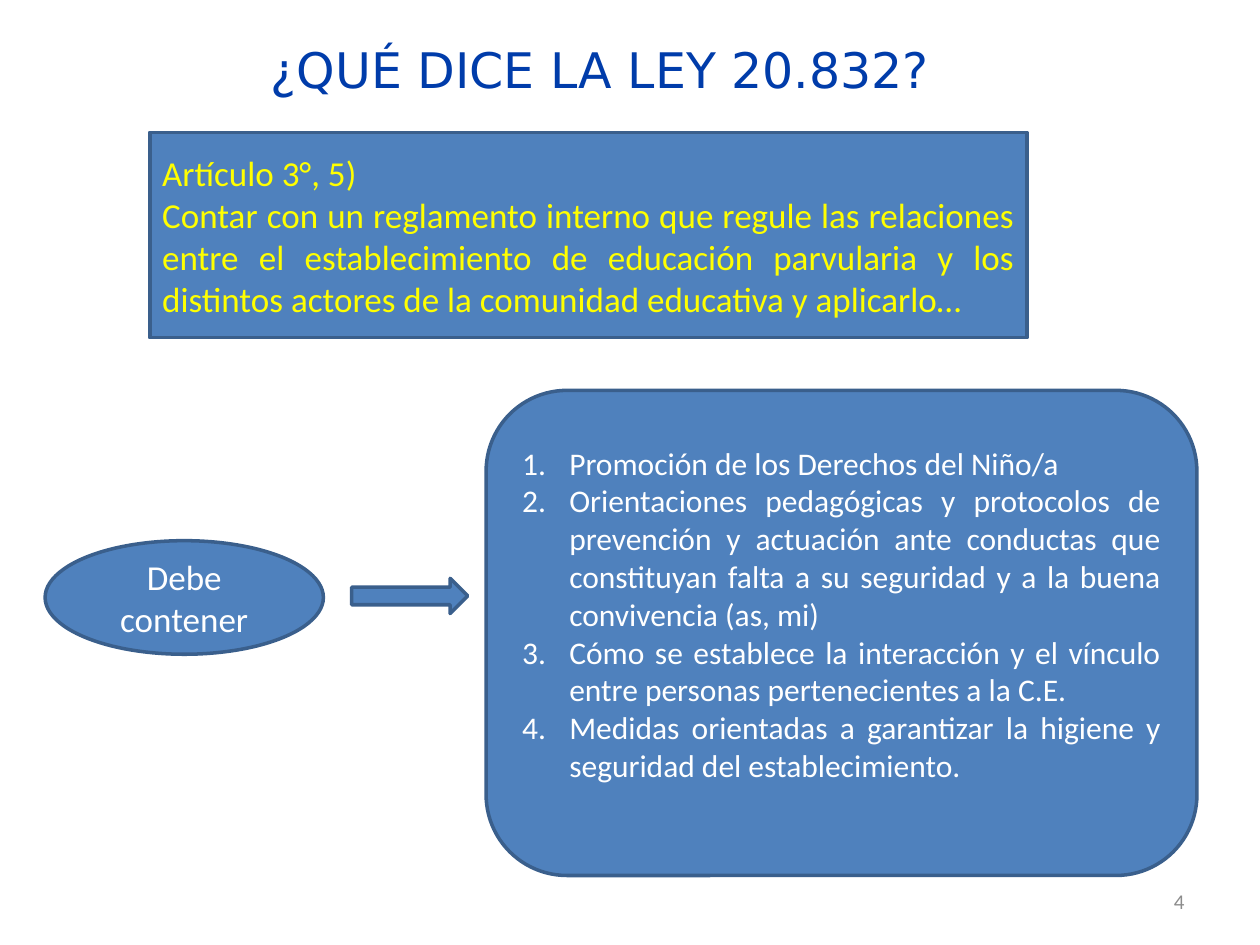
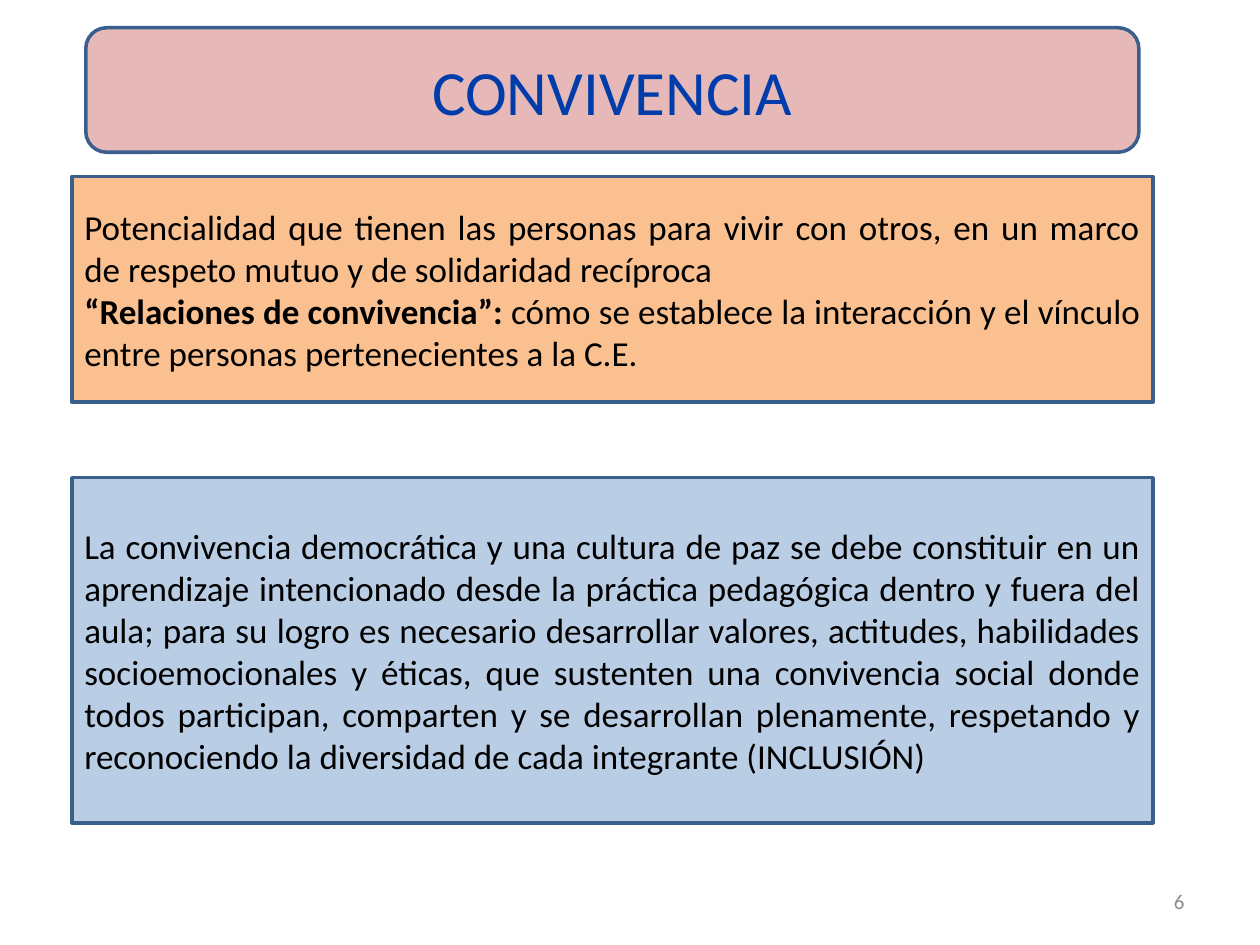
from lxml import etree
from pptx import Presentation
from pptx.dml.color import RGBColor
from pptx.enum.shapes import MSO_SHAPE
from pptx.enum.text import MSO_ANCHOR, PP_ALIGN
from pptx.oxml.ns import qn
from pptx.util import Cm, Pt

COLORS = {
    "blue": "4F81BD",
    "border": "3A5F8C",
    "title": "003CAA",
    "yellow": "FFFF00",
    "white": "FFFFFF",
    "black": "000000",
    "gray": "8C8C8C",
    "orange": "FAC090",
    "light_blue": "B9CDE5",
    "pink": "E6B9B8",
}
BODY_FONT = "Calibri"
TITLE_FONT = "DejaVu Sans"
LIST_INDENT = Cm(0.95)

ARTICLE = [
    "Artículo 3°, 5)",
    "Contar con un reglamento interno que regule las relaciones entre el "
    "establecimiento de educación parvularia y los distintos actores de la "
    "comunidad educativa y aplicarlo…",
]
REQUIREMENTS = [
    "Promoción de los Derechos del Niño/a",
    "Orientaciones pedagógicas y protocolos de prevención y actuación ante "
    "conductas que constituyan falta a su seguridad y a la buena convivencia (as, mi)",
    "Cómo se establece la interacción y el vínculo entre personas "
    "pertenecientes a la C.E.",
    "Medidas orientadas a garantizar la higiene y seguridad del establecimiento.",
]
DEFINITION = [
    "Potencialidad que tienen las personas para vivir con otros, en un marco de "
    "respeto mutuo y de solidaridad recíproca",
    [
        ("“Relaciones de convivencia”: ", True),
        ("cómo se establece la interacción y el vínculo entre personas "
         "pertenecientes a la C.E.", False),
    ],
]
INCLUSION = [
    "La convivencia democrática y una cultura de paz se debe constituir en un "
    "aprendizaje intencionado desde la práctica pedagógica dentro y fuera del aula; "
    "para su logro es necesario desarrollar valores, actitudes, habilidades "
    "socioemocionales y éticas, que sustenten una convivencia social donde todos "
    "participan, comparten y se desarrollan plenamente, respetando y reconociendo "
    "la diversidad de cada integrante (INCLUSIÓN)",
]


def color(name):
    """Return the named colour."""
    return RGBColor.from_string(COLORS[name])


def number_paragraph(paragraph):
    """Give a paragraph an automatic number and a hanging indent."""
    properties = paragraph._p.get_or_add_pPr()
    properties.set("marL", str(LIST_INDENT))
    properties.set("indent", str(-LIST_INDENT))
    etree.SubElement(properties, qn("a:buFont"), typeface="+mj-lt")
    etree.SubElement(properties, qn("a:buAutoNum"), type="arabicPeriod")


def write_text(shape, paragraphs, size=20, ink="black", font=BODY_FONT,
               align=PP_ALIGN.JUSTIFY, numbered=False):
    """Write paragraphs, each a string or a list of (text, bold) runs."""
    frame = shape.text_frame
    frame.word_wrap = True
    frame.vertical_anchor = MSO_ANCHOR.MIDDLE
    for index, content in enumerate(paragraphs):
        paragraph = frame.add_paragraph() if index else frame.paragraphs[0]
        paragraph.alignment = align
        if numbered:
            number_paragraph(paragraph)
        runs = [(content, False)] if isinstance(content, str) else content
        for text, bold in runs:
            run = paragraph.add_run()
            run.text = text
            run.font.name = font
            run.font.size = Pt(size)
            run.font.bold = bold
            run.font.color.rgb = color(ink)


def add_box(slide, kind, left, top, width, height, fill="blue"):
    """Add a filled preset shape with the shared border."""
    shape = slide.shapes.add_shape(kind, Cm(left), Cm(top), Cm(width), Cm(height))
    shape.shadow.inherit = False
    shape.fill.solid()
    shape.fill.fore_color.rgb = color(fill)
    shape.line.color.rgb = color("border")
    shape.line.width = Pt(2)
    return shape


def add_label(slide, text, left, top, width, height, **text_format):
    """Add a text box holding one line."""
    label = slide.shapes.add_textbox(Cm(left), Cm(top), Cm(width), Cm(height))
    write_text(label, [text], **text_format)


def add_slide(presentation, number):
    """Add a blank slide with its page number."""
    slide = presentation.slides.add_slide(presentation.slide_layouts[6])
    add_label(slide, str(number), 18.21, 17.65, 5.92, 1.02,
              size=12, ink="gray", align=PP_ALIGN.RIGHT)
    return slide


def build_law_slide(presentation):
    """Build the slide on what the law requires."""
    slide = add_slide(presentation, 4)
    add_label(slide, "¿QUÉ DICE LA LEY 20.832? ", 0.91, 0.38, 22.68, 2.01,
              size=28, ink="title", font=TITLE_FONT, align=PP_ALIGN.CENTER)
    article = add_box(slide, MSO_SHAPE.RECTANGLE, 3.02, 2.67, 17.68, 4.14)
    write_text(article, ARTICLE, ink="yellow")
    must_contain = add_box(slide, MSO_SHAPE.OVAL, 0.91, 10.9, 5.61, 2.29)
    write_text(must_contain, ["Debe contener"], ink="white", align=PP_ALIGN.CENTER)
    add_box(slide, MSO_SHAPE.RIGHT_ARROW, 7.09, 11.66, 2.34, 0.71)
    requirements = add_box(slide, MSO_SHAPE.ROUNDED_RECTANGLE, 9.8, 7.87, 14.33, 9.78)
    requirements.text_frame.margin_bottom = Cm(0.9)
    write_text(requirements, REQUIREMENTS, size=18, ink="white", numbered=True)


def build_coexistence_slide(presentation):
    """Build the slide that defines coexistence."""
    slide = add_slide(presentation, 6)
    for paragraphs, top, height, fill in (
        (DEFINITION, 3.56, 4.55, "orange"),
        (INCLUSION, 9.63, 6.96, "light_blue"),
    ):
        panel = add_box(slide, MSO_SHAPE.RECTANGLE, 1.45, top, 21.79, height, fill)
        write_text(panel, paragraphs)
    heading = add_box(slide, MSO_SHAPE.ROUNDED_RECTANGLE, 1.73, 0.56, 21.23, 2.51, "pink")
    write_text(heading, ["CONVIVENCIA"], size=36, ink="title", align=PP_ALIGN.CENTER)


def main():
    """Build and save the presentation."""
    presentation = Presentation()
    presentation.slide_width = Cm(25.4)
    presentation.slide_height = Cm(19.05)
    build_law_slide(presentation)
    build_coexistence_slide(presentation)
    presentation.save("out.pptx")


if __name__ == "__main__":
    main()
